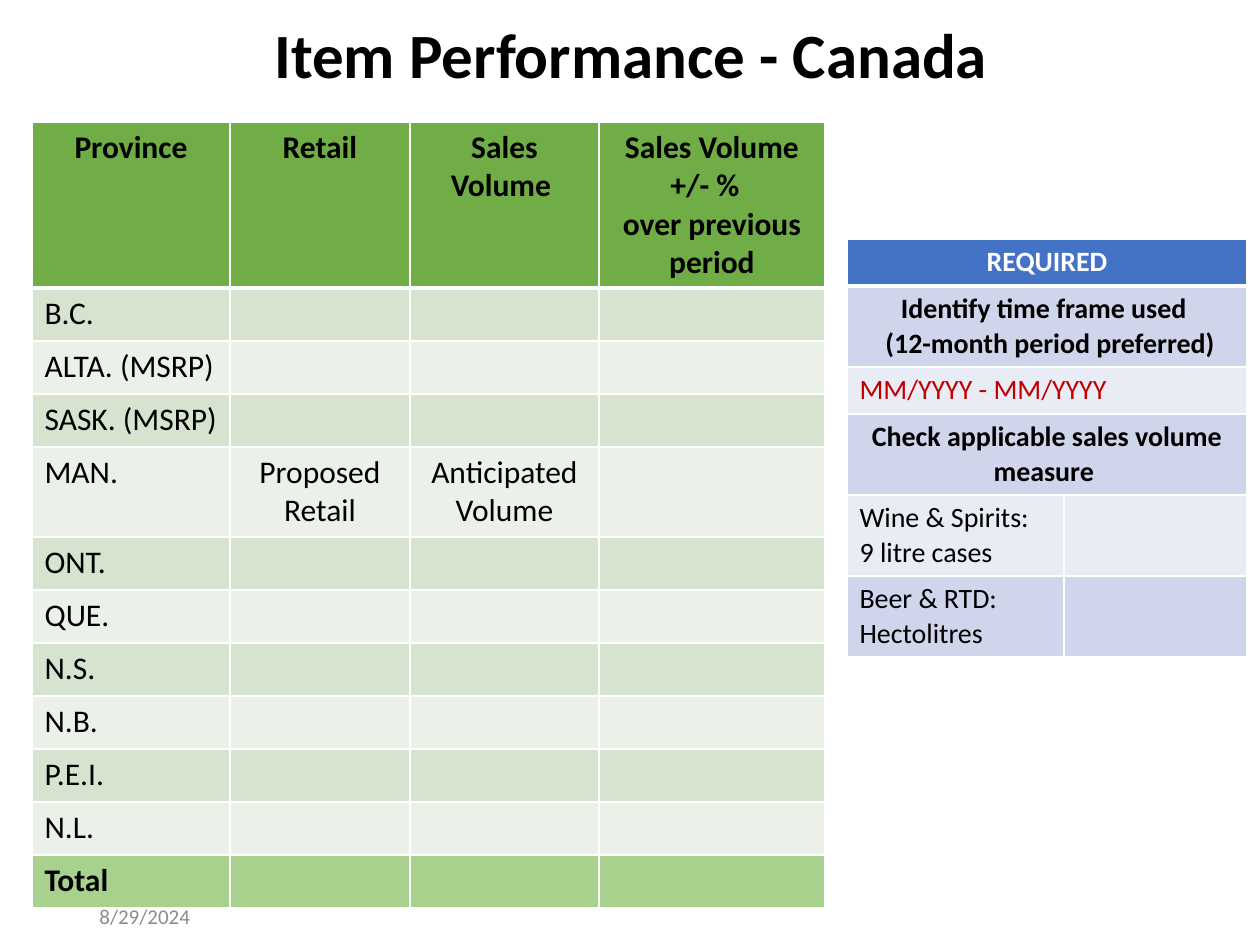
"""Build the Item Performance - Canada slide."""
import pptx
import pptx.dml.color
import pptx.enum.text
import pptx.oxml
import pptx.oxml.ns
import pptx.util

PX = 914400 / 126
LEFT = pptx.enum.text.PP_ALIGN.LEFT
CENTER = pptx.enum.text.PP_ALIGN.CENTER
MIDDLE = pptx.enum.text.MSO_ANCHOR.MIDDLE


def write(tf, lines, size, color, bold, align):
    tf.word_wrap = True
    for i, line in enumerate(lines):
        p = tf.paragraphs[0] if i == 0 else tf.add_paragraph()
        p.alignment = align
        r = p.add_run()
        r.text = line
        r.font.name = "Calibri"
        r.font.size = pptx.util.Pt(size)
        r.font.bold = bold
        r.font.color.rgb = pptx.dml.color.RGBColor.from_string(color)


def add_table(s, left, top, widths, heights, fills):
    sp = s.shapes.add_table(len(heights), len(widths), *[
        round(v * PX) for v in (left, top, sum(widths), sum(heights))])
    table = sp.table
    table.first_row = table.horz_banding = False
    for col, width in zip(table.columns, widths):
        col.width = round(width * PX)
    for i, (row, height, fill) in enumerate(zip(table.rows, heights, fills)):
        row.height = round(height * PX)
        for cell in row.cells:
            cell.fill.solid()
            cell.fill.fore_color.rgb = pptx.dml.color.RGBColor.from_string(fill)
            for n, side in enumerate("LRTB"):
                thick = (i, side) in ((0, "B"), (1, "T"))
                ln = pptx.oxml.parse_xml(
                    f'<a:ln{side} {pptx.oxml.ns.nsdecls("a")} w="{38100 if thick else 12700}">'
                    f'<a:solidFill><a:srgbClr val="FFFFFF"/></a:solidFill></a:ln{side}>')
                cell._tc.get_or_add_tcPr().insert(n, ln)
    return table


prs = pptx.Presentation()
prs.slide_width = round(1260 * PX)
prs.slide_height = round(945 * PX)
s = prs.slides.add_slide(prs.slide_layouts[6])

for box, text, size, color, bold, align, spacing in (
    ((64, 16, 1134, 84), "Item Performance - Canada", 36, "000000", True, CENTER, 0.9),
    ((87, 907, 284, 19), "8/29/2024", 12, "8C8C8C", False, LEFT, 1.0),
):
    sp = s.shapes.add_textbox(*[round(v * PX) for v in box])
    tf = sp.text_frame
    tf.vertical_anchor = MIDDLE
    write(tf, [text], size, color, bold, align)
    tf.paragraphs[0].line_spacing = spacing

provinces = ["B.C.", "ALTA. (MSRP)", "SASK. (MSRP)", "MAN.", "ONT.", "QUE.",
             "N.S.", "N.B.", "P.E.I.", "N.L."]
headers = [["Province"], ["Retail"], ["Sales Volume "],
           ["Sales Volume", "+/- %  ", "over previous period"]]
heights = [166] + [90 if name == "MAN." else 53 for name in provinces] + [53]
fills = ["70AD47"] + ["D5E3CF", "EBF1E9"] * 5 + ["A9D18E"]
sales = add_table(s, 32, 122, [198, 180, 189, 226], heights, fills)
for c, lines in enumerate(headers):
    write(sales.cell(0, c).text_frame, lines, 18, "000000", True, CENTER)
for i, name in enumerate(provinces + ["Total "], 1):
    write(sales.cell(i, 0).text_frame, [name], 18, "000000", i > len(provinces), LEFT)
manitoba = provinces.index("MAN.") + 1
for c, text in enumerate(["Proposed Retail", "Anticipated Volume"], 1):
    write(sales.cell(manitoba, c).text_frame, [text], 18, "000000", False, CENTER)

required_rows = [
    (["REQUIRED"], "FFFFFF", True, CENTER),
    (["Identify time frame used ", " (12-month period preferred)"], "000000", True, CENTER),
    (["MM/YYYY - MM/YYYY"], "C00000", False, LEFT),
    (["Check applicable sales volume measure "], "000000", True, CENTER),
    (["Wine & Spirits: ", "9 litre cases"], "000000", False, LEFT),
    (["Beer & RTD: Hectolitres"], "000000", False, LEFT),
]
required = add_table(s, 847, 239, [217, 183], [47, 81, 47, 81, 81, 81],
                     ["4472C4"] + ["CFD5EA", "E9EBF5"] * 2 + ["CFD5EA"])
for i, (lines, color, bold, align) in enumerate(required_rows):
    if i < 4:
        required.cell(i, 0).merge(required.cell(i, 1))
    write(required.cell(i, 0).text_frame, lines, 16, color, bold, align)

prs.save("out.pptx")
